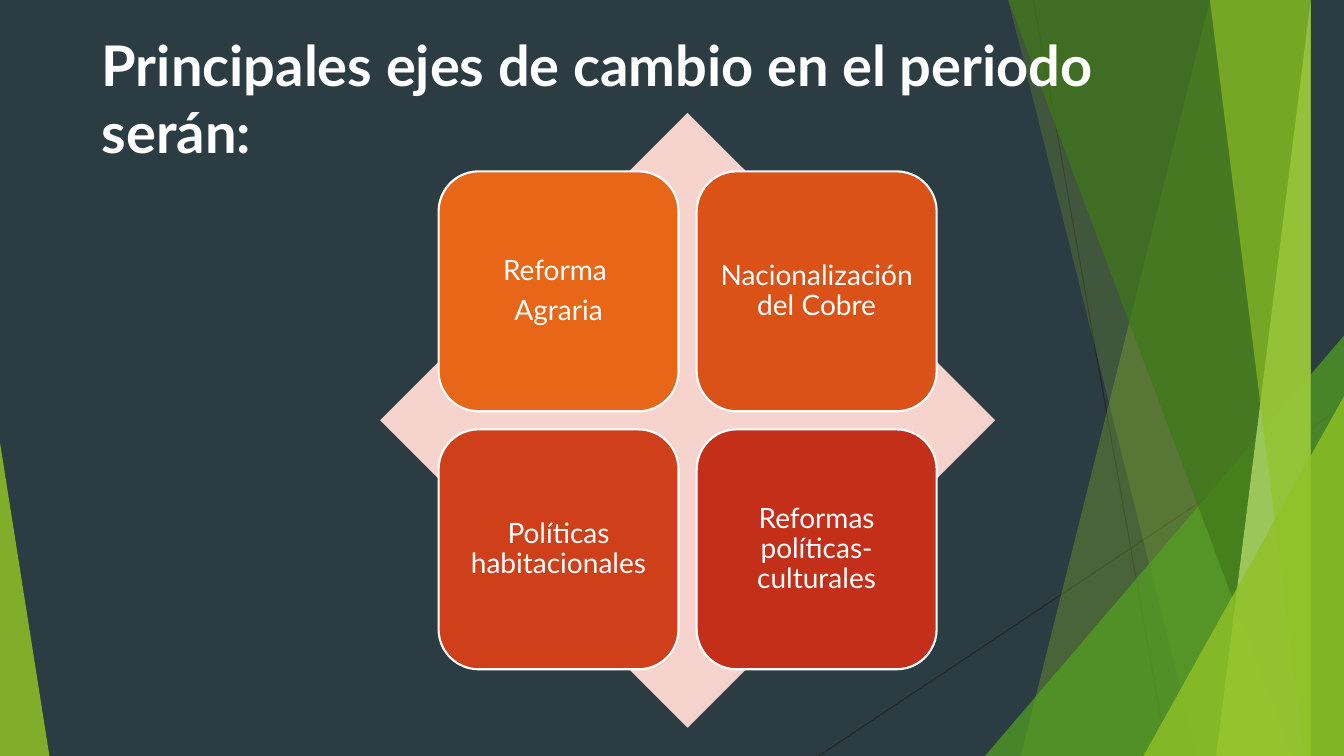
from lxml import etree
from pptx import Presentation
from pptx.dml.color import RGBColor
from pptx.enum.shapes import MSO_CONNECTOR, MSO_SHAPE
from pptx.enum.text import MSO_ANCHOR, MSO_AUTO_SIZE, PP_ALIGN
from pptx.oxml.ns import qn
from pptx.util import Inches, Pt

STRAIGHT = MSO_CONNECTOR.STRAIGHT
TRIANGLE = MSO_SHAPE.ISOSCELES_TRIANGLE
DIAMOND = MSO_SHAPE.DIAMOND
ROUNDED = MSO_SHAPE.ROUNDED_RECTANGLE
TOP, MIDDLE = MSO_ANCHOR.TOP, MSO_ANCHOR.MIDDLE
LEFT, CENTER = PP_ALIGN.LEFT, PP_ALIGN.CENTER
GROW = MSO_AUTO_SIZE.SHAPE_TO_FIT_TEXT

WIDTH, HEIGHT = 13.33, 7.5
WHITE = "FFFFFF"


def paint(shape, color, opacity=100, outline=None):
    """Fill a shape, with an optional opacity in percent and outline colour."""
    shape.shadow.inherit = False
    shape.fill.solid()
    shape.fill.fore_color.rgb = RGBColor.from_string(color)
    if opacity < 100:
        tint = shape.fill._xPr.find(qn("a:solidFill"))[0]
        etree.SubElement(tint, qn("a:alpha"), val=str(opacity * 1000))
    if outline:
        shape.line.color.rgb = RGBColor.from_string(outline)
        shape.line.width = Pt(1.5)
    else:
        shape.line.fill.background()


def write(frame, text, size, align, bold=False, spacing=1.0, after=0):
    frame.word_wrap = True
    frame.text = text
    for para in frame.paragraphs:
        para.alignment = align
        para.line_spacing = spacing
        para.space_before = Pt(0)
        para.space_after = Pt(after)
        for span in para.runs:
            span.font.name = "Lato"
            span.font.size = Pt(size)
            span.font.bold = bold
            span.font.color.rgb = RGBColor.from_string(WHITE)


deck = Presentation()
deck.slide_width, deck.slide_height = Inches(WIDTH), Inches(HEIGHT)
page = deck.slides.add_slide(deck.slide_layouts[5])
page.background.fill.solid()
page.background.fill.fore_color.rgb = RGBColor.from_string("2C3C43")

# Thin crossing lines
for ends in [(10.25, 0, 11.58, HEIGHT), (WIDTH, 4.03, 8.12, HEIGHT)]:
    ray = page.shapes.add_connector(STRAIGHT, *map(Inches, ends))
    ray.line.color.rgb = RGBColor.from_string("262626")
    ray.line.width = Pt(0.75)
    etree.SubElement(ray.element.spPr, qn("a:effectLst"))

# Green facets: bands run from a top x to a bottom x and out to the right edge;
# triangles stand on the bottom edge with their apex at one side
FACETS = [
    ("band", 12.28, 10.04, "90C226", 30),
    ("band", 10.5, 11.83, "90C226", 20),
    ("triangle", (9.77, 3.33, 3.56, 4.17), 1, "54A021", 72),
    ("band", 10.21, 12.91, "3F7819", 70),
    ("band", 13.03, 11.92, "C0E474", 70),
    ("band", 11.96, 13.18, "90C226", 65),
    ("triangle", (11.34, 3.93, 1.99, 3.57), 1, "90C226", 80),
    ("triangle", (0, 4.39, 0.49, 3.11), 0, "90C226", 85),
]
for kind, first, second, color, opacity in FACETS:
    if kind == "band":
        outline = page.shapes.build_freeform(first, -0.01, scale=Inches(1))
        outline.add_line_segments(
            [(WIDTH, -0.01), (WIDTH, HEIGHT), (second, HEIGHT)], close=True)
        facet = outline.convert_to_shape()
    else:
        facet = page.shapes.add_shape(TRIANGLE, *map(Inches, first))
        facet.adjustments[0] = second
    paint(facet, color, opacity)

# Diamond with a two by two grid of themes
diamond = page.shapes.add_shape(DIAMOND, *map(Inches, (3.77, 1.12, 6.1, 6.1)))
paint(diamond, "F6D3CC")

THEMES = [
    ("Reforma \nAgraria", "E76618"),
    ("Nacionalización del Cobre", "DB5219"),
    ("Políticas habitacionales", "CF3F1A"),
    ("Reformas políticas-culturales", "C42F1A"),
]
CARD, PITCH = 2.38, 2.56
for index, (theme, color) in enumerate(THEMES):
    row, column = divmod(index, 2)
    card = page.shapes.add_shape(
        ROUNDED, Inches(4.35 + column * PITCH), Inches(1.7 + row * PITCH),
        Inches(CARD), Inches(CARD))
    paint(card, color, outline=WHITE)
    frame = card.text_frame
    frame.margin_left = frame.margin_right = Inches(0.08)
    frame.margin_top = frame.margin_bottom = Inches(0.08)
    frame.vertical_anchor = MIDDLE
    write(frame, theme, 20, CENTER, spacing=0.9, after=7)

# Title, brought in front of the facets
title = page.shapes.title
title.left, title.top = Inches(0.91), Inches(0.25)
title.width, title.height = Inches(11.31), Inches(0.77)
title.text_frame.vertical_anchor = TOP
title.text_frame.auto_size = GROW
write(title.text_frame, "Principales ejes de cambio en el periodo serán:", 40, LEFT,
      bold=True)
title.element.getparent().append(title.element)

deck.save("out.pptx")
